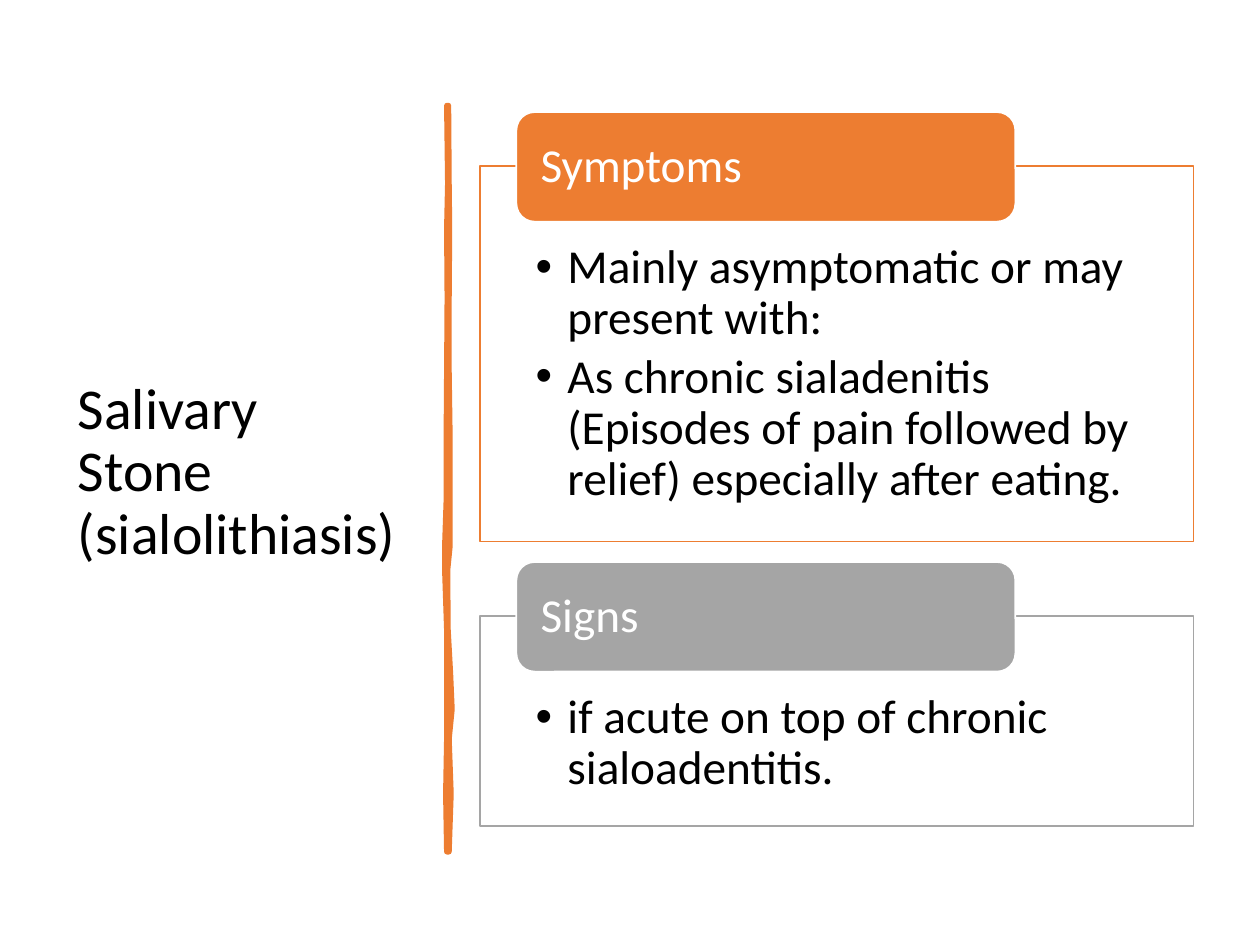
"""Build the salivary stone slide with its symptoms and signs panels."""
from dataclasses import dataclass

from lxml.etree import SubElement
from pptx import Presentation
from pptx.dml.color import RGBColor
from pptx.enum.shapes import MSO_SHAPE
from pptx.enum.text import MSO_ANCHOR, PP_ALIGN
from pptx.oxml.ns import qn
from pptx.shapes.autoshape import Shape
from pptx.slide import Slide
from pptx.text.text import TextFrame, _Paragraph
from pptx.util import Cm, Pt


@dataclass(frozen=True)
class Theme:
    font: str = "Calibri"
    title_size: int = 33
    body_size: int = 27
    black: str = "000000"
    white: str = "FFFFFF"
    orange: str = "ED7D31"
    gray: str = "A5A5A5"
    border: float = 1
    brush: float = 3.25


@dataclass(frozen=True)
class Panel:
    heading: str
    points: tuple[str, ...]
    top: float
    height: float
    color: str


@dataclass(frozen=True)
class Stroke:
    y: float
    left: float
    right: float


THEME = Theme()
PANELS = (
    Panel(
        "Symptoms",
        (
            "Mainly asymptomatic or may present with:",
            "As chronic sialadenitis (Episodes of pain followed by relief) especially after eating.",
        ),
        3.35, 7.57, THEME.orange,
    ),
    Panel("Signs", ("if acute on top of chronic sialoadentitis.",), 12.42, 4.24, THEME.gray),
)
STROKES = (
    Stroke(2.13, 9.01, 9.04),
    Stroke(3.7, 9.03, 9.05),
    Stroke(4.6, 9.01, 9.06),
    Stroke(6, 9.02, 9.05),
    Stroke(7.5, 9.01, 9.05),
    Stroke(8.9, 9.0, 9.07),
    Stroke(10.1, 9.0, 9.07),
    Stroke(11, 8.97, 9.07),
    Stroke(11.5, 8.97, 9.02),
    Stroke(12.7, 9.01, 9.03),
    Stroke(13.6, 9.01, 9.08),
    Stroke(14.3, 9.01, 9.11),
    Stroke(14.9, 9.01, 9.05),
    Stroke(16, 8.99, 9.09),
    Stroke(17.17, 9.01, 9.05),
)


def paint(sp: Shape, fill: str, line: str, width: float) -> None:
    """Give a shape its fill and outline."""
    sp.shadow.inherit = False
    sp.fill.solid()
    sp.fill.fore_color.rgb = RGBColor.from_string(fill)
    sp.line.color.rgb = RGBColor.from_string(line)
    sp.line.width = Pt(width)


def set_frame(tf: TextFrame, anchor: MSO_ANCHOR, side: float, top: float, bottom: float) -> None:
    """Set wrapping, anchor and insets of a text frame."""
    tf.word_wrap = True
    tf.vertical_anchor = anchor
    tf.margin_left = tf.margin_right = Cm(side)
    tf.margin_top, tf.margin_bottom = Cm(top), Cm(bottom)


def write(p: _Paragraph, text: str, size: int, color: str) -> None:
    """Write one left-aligned paragraph."""
    p.text = text
    p.alignment = PP_ALIGN.LEFT
    p.line_spacing = 0.9
    for r in p.runs:
        r.font.name = THEME.font
        r.font.size = Pt(size)
        r.font.color.rgb = RGBColor.from_string(color)


def add_bullet(p: _Paragraph) -> None:
    """Give a paragraph a hanging bullet."""
    p.space_after = Pt(4)
    pPr = p._p.get_or_add_pPr()
    pPr.set("marL", str(Cm(0.64)))
    pPr.set("indent", str(-Cm(0.64)))
    SubElement(pPr, qn("a:buFont"), typeface="Arial")
    SubElement(pPr, qn("a:buChar"), char="•")


def add_title(s: Slide, text: str) -> None:
    """Add the title at the left."""
    tf = s.shapes.add_textbox(Cm(1.32), Cm(1.78), Cm(7.11), Cm(15.52)).text_frame
    set_frame(tf, MSO_ANCHOR.MIDDLE, 0.25, 0.13, 0.13)
    write(tf.paragraphs[0], text, THEME.title_size, THEME.black)


def add_divider(s: Slide) -> None:
    """Add the hand-drawn vertical divider."""
    right = [(Cm(k.right), Cm(k.y)) for k in STROKES]
    left = [(Cm(k.left), Cm(k.y)) for k in reversed(STROKES)]
    builder = s.shapes.build_freeform(*right[0])
    builder.add_line_segments(right[1:] + left, close=True)
    paint(builder.convert_to_shape(), THEME.orange, THEME.orange, THEME.brush)


def add_panel(s: Slide, panel: Panel) -> None:
    """Add a bulleted box with a heading tab over its top edge."""
    box = s.shapes.add_shape(
        MSO_SHAPE.RECTANGLE, Cm(9.68), Cm(panel.top), Cm(14.38), Cm(panel.height)
    )
    paint(box, THEME.white, panel.color, THEME.border)
    tf = box.text_frame
    set_frame(tf, MSO_ANCHOR.TOP, 1.12, 1.55, 0.53)
    for i, text in enumerate(panel.points):
        p = tf.add_paragraph() if i else tf.paragraphs[0]
        write(p, text, THEME.body_size, THEME.black)
        add_bullet(p)

    tab = s.shapes.add_shape(
        MSO_SHAPE.ROUNDED_RECTANGLE, Cm(10.41), Cm(panel.top - 1.09), Cm(10.06), Cm(2.21)
    )
    paint(tab, panel.color, THEME.white, THEME.border)
    set_frame(tab.text_frame, MSO_ANCHOR.MIDDLE, 0.38, 0, 0)
    write(tab.text_frame.paragraphs[0], panel.heading, THEME.body_size, THEME.white)


def main() -> None:
    """Build and save the slide."""
    prs = Presentation()
    prs.slide_width, prs.slide_height = Cm(25.4), Cm(19.05)
    s = prs.slides.add_slide(prs.slide_layouts[6])
    add_title(s, "Salivary Stone (sialolithiasis)")
    add_divider(s)
    for panel in PANELS:
        add_panel(s, panel)
    prs.save("out.pptx")


if __name__ == "__main__":
    main()
